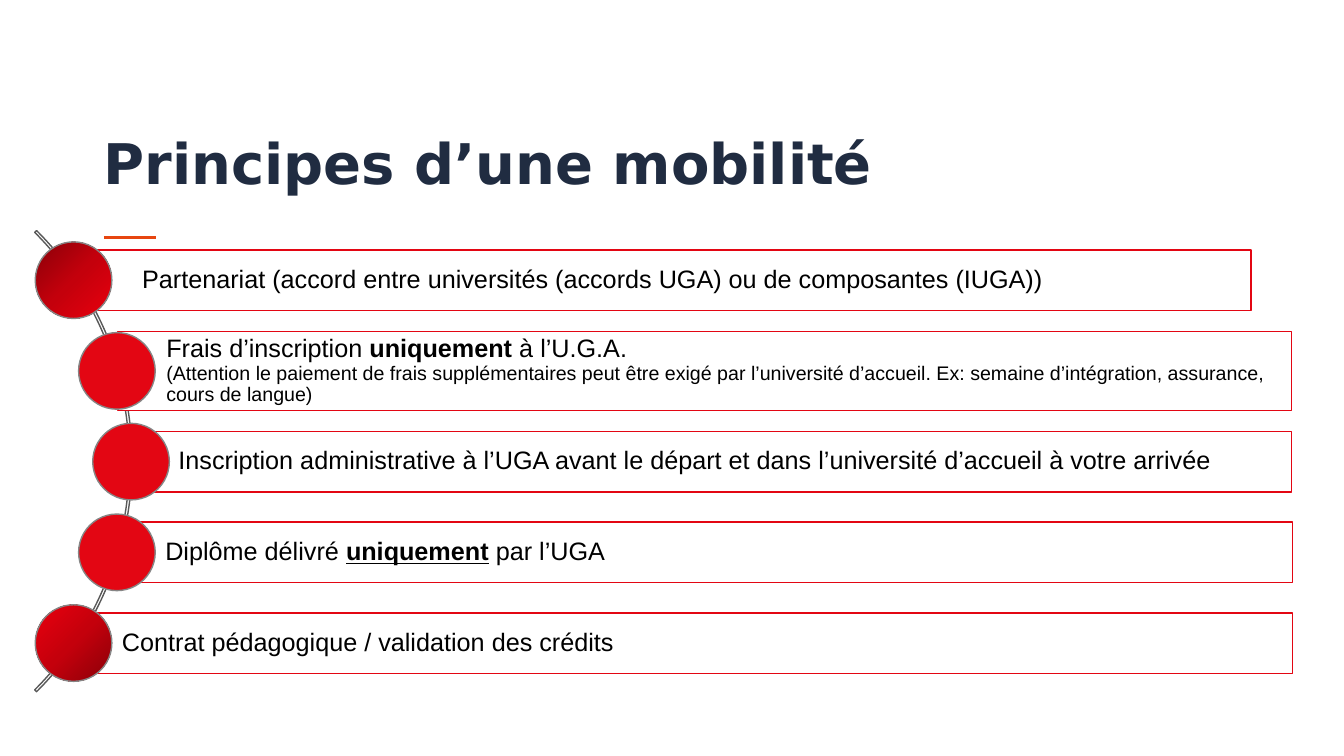
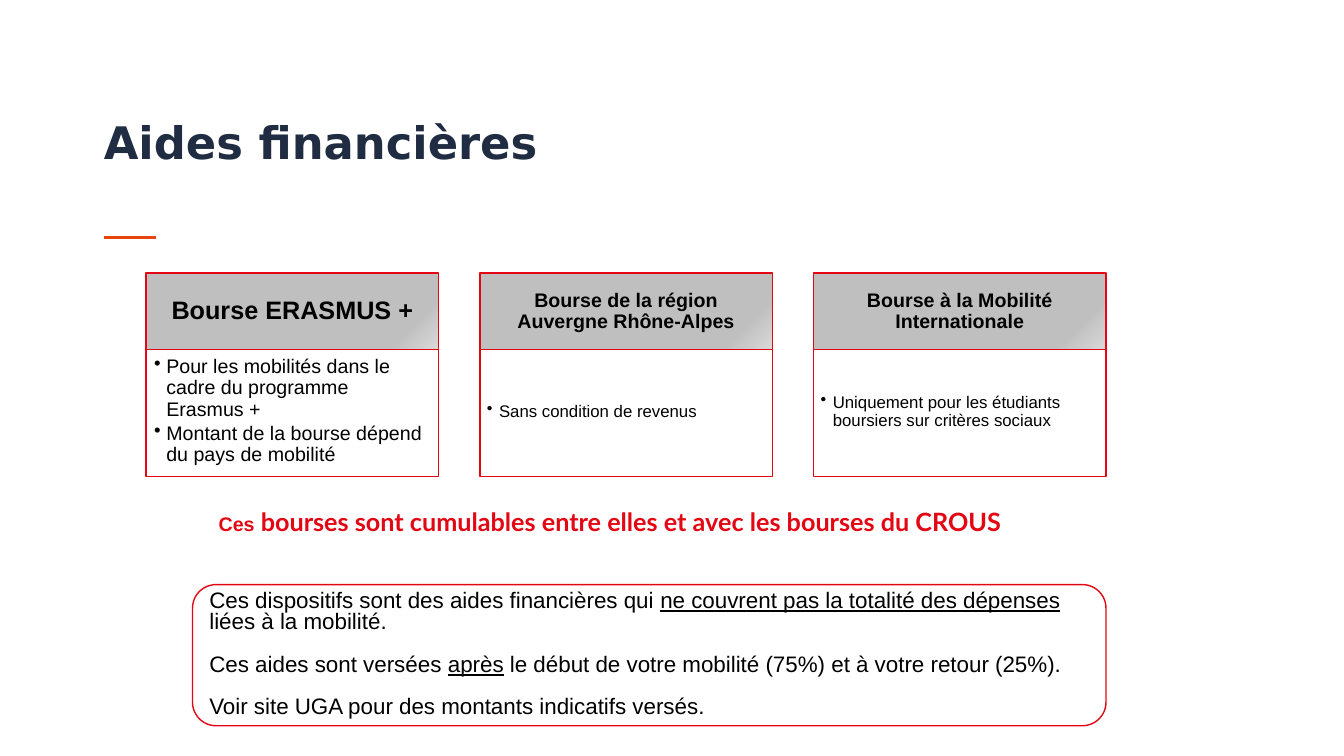
import pptx
import pptx.util
import pptx.dml.color
import pptx.enum.shapes
import pptx.enum.text
import pptx.oxml
import pptx.oxml.ns
import lxml.etree

RGBColor = pptx.dml.color.RGBColor
Shape = pptx.enum.shapes.MSO_SHAPE
Align = pptx.enum.text.PP_ALIGN
Anchor = pptx.enum.text.MSO_ANCHOR
qn = pptx.oxml.ns.qn

PX = 9144
TITLE_ONLY = 5
NAVY = RGBColor(0x20, 0x2C, 0x41)
ORANGE = RGBColor(0xE7, 0x46, 0x10)
RED = RGBColor(0xE3, 0x06, 0x13)
DARK_RED = RGBColor(0x8A, 0x00, 0x08)
MID_RED = RGBColor(0xC4, 0x00, 0x0C)
BRIGHT_RED = RGBColor(0xE9, 0x00, 0x0E)
WHITE = RGBColor(0xFF, 0xFF, 0xFF)
BLACK = RGBColor(0x00, 0x00, 0x00)
PALE_GREY = RGBColor(0xD9, 0xD9, 0xD9)
SILVER = RGBColor(0xBF, 0xBF, 0xBF)
GREY = RGBColor(0x86, 0x86, 0x86)
DARK_GREY = RGBColor(0x59, 0x59, 0x59)

BOLD = {"bold": True}
UNDERLINE = {"underline": True}
RED_STOPS = [(0, DARK_RED), (50, MID_RED), (100, BRIGHT_RED)]
HEADER_STOPS = [(0, PALE_GREY), (14, SILVER)]
CORNER_GLOW = '<a:path path="circle"><a:fillToRect l="100000" t="100000"/></a:path>'

PRINCIPLES = [
    (93, 1148, 60, 35, 45,
     ["Partenariat (accord entre universités (accords UGA) ou de composantes (IUGA))"]),
    (117, 1164, 78, 78, None,
     ["Frais d’inscription ", ("uniquement", BOLD), " à l’U.G.A.", "\n",
      ("(Attention le paiement de frais supplémentaires peut être exigé par l’université "
       "d’accueil. Ex: semaine d’intégration, assurance, cours de langue)",
       {"size": pptx.util.Pt(14)})]),
    (129, 1152, 60, 92, None,
     ["Inscription administrative à l’UGA avant le départ et dans l’université d’accueil "
      "à votre arrivée"]),
    (116, 1166, 60, 78, None,
     ["Diplôme délivré ", ("uniquement", {"bold": True, "underline": True}), " par l’UGA"]),
    (73, 1209, 60, 35, 225,
     ["Contrat pédagogique / validation des crédits"]),
]
GRANTS = [
    ("Bourse ERASMUS +", 18, 14, (8, 8, 11, 12),
     ["Pour les mobilités dans le cadre du programme Erasmus +",
      "Montant de la bourse dépend du pays de mobilité"]),
    ("Bourse de la région Auvergne Rhône-Alpes", 14, 12, (7, 7, 9, 10),
     ["Sans condition de revenus"]),
    ("Bourse à la Mobilité Internationale", 14, 12, (7, 7, 9, 10),
     ["Uniquement pour les étudiants boursiers sur critères sociaux"]),
]
CONDITIONS = [
    ["Ces dispositifs sont des aides financières qui ",
     ("ne couvrent pas la totalité des dépenses", UNDERLINE), " liées à la mobilité."],
    ["Ces aides sont versées ", ("après", UNDERLINE),
     " le début de votre mobilité (75%) et à votre retour (25%)."],
    ["Voir site UGA pour des montants indicatifs versés."],
]


def px(*lengths):
    return [pptx.util.Emu(length * PX) for length in lengths]


def style_font(font, size, color, name="Arial", bold=False):
    font.name = name
    font.size = pptx.util.Pt(size)
    font.color.rgb = color
    font.bold = bold


def add_spans(para, spans):
    for span in spans:
        text, changes = span if isinstance(span, tuple) else (span, {})
        if text == "\n":
            para.add_line_break()
            continue
        run = para.add_run()
        run.text = text
        for attribute, value in changes.items():
            setattr(run.font, attribute, value)


def set_bullet(para, indent):
    properties = para._p.get_or_add_pPr()
    properties.set("marL", str(indent * PX))
    properties.set("indent", str(-indent * PX))
    lxml.etree.SubElement(properties, qn("a:buChar")).set("char", "•")


def write(box, paragraphs, size, color=BLACK, bold=False, align=Align.LEFT,
          insets=(10, 5, 10, 5), anchor=Anchor.MIDDLE, spacing=0.9, gap=0, bullet=False):
    frame = box.text_frame
    frame.word_wrap = True
    frame.vertical_anchor = anchor
    (frame.margin_left, frame.margin_top,
     frame.margin_right, frame.margin_bottom) = px(*insets)
    for index, spans in enumerate(paragraphs):
        para = frame.add_paragraph() if index else frame.paragraphs[0]
        if bullet:
            set_bullet(para, 12)
        para.alignment = align
        para.line_spacing = spacing
        if index:
            para.space_before = pptx.util.Pt(gap)
        style_font(para.font, size, color, bold=bold)
        add_spans(para, spans)


def add_box(page, kind, left, top, width, height, fill=WHITE, line=RED):
    box = page.shapes.add_shape(kind, *px(left, top, width, height))
    box.shadow.inherit = False
    box.fill.solid()
    box.fill.fore_color.rgb = fill
    box.line.color.rgb = line
    box.line.width = pptx.util.Pt(1)
    return box


def set_gradient(box, stops, direction):
    stop_xml = "".join(
        f'<a:gs pos="{position * 1000}"><a:srgbClr val="{color}"/></a:gs>'
        for position, color in stops)
    gradient = pptx.oxml.parse_xml(
        f'<a:gradFill {pptx.oxml.ns.nsdecls("a")} rotWithShape="1">'
        f'<a:gsLst>{stop_xml}</a:gsLst>{direction}</a:gradFill>')
    properties = box._element.spPr
    properties.replace(properties.find(qn("a:solidFill")), gradient)


def add_page(deck, title, size, top):
    page = deck.slides.add_slide(deck.slide_layouts[TITLE_ONLY])
    heading = page.shapes.title
    heading.left, heading.top, heading.width, heading.height = px(93, top, 1046, 100)
    frame = heading.text_frame
    frame.text = title
    frame.auto_size = pptx.enum.text.MSO_AUTO_SIZE.NONE
    frame.vertical_anchor = Anchor.TOP
    para = frame.paragraphs[0]
    para.alignment = Align.LEFT
    para.line_spacing = 0.9
    style_font(para.font, size, NAVY, "DejaVu Sans", True)
    rule = page.shapes.add_connector(
        pptx.enum.shapes.MSO_CONNECTOR.STRAIGHT, *px(103, 236, 155, 236))
    rule.line.color.rgb = ORANGE
    rule.line.width = pptx.util.Pt(2.25)
    lxml.etree.SubElement(rule._element.spPr, qn("a:effectLst"))
    return page


def add_arc(page):
    arc = add_box(page, Shape.BLOCK_ARC, -516, 134, 647, 647, WHITE, DARK_GREY)
    for index, value in enumerate((189, 27, 0.004)):
        arc.adjustments[index] = value


def add_principle(page, middle, left, width, height, dot_left, angle, spans):
    row = add_box(page, Shape.RECTANGLE, left, middle - height // 2, width, height)
    write(row, [spans], 18, insets=(48, 5, 5, 5))
    dot = add_box(page, Shape.OVAL, dot_left, middle - 38, 76, 76, RED, GREY)
    if angle is not None:
        set_gradient(dot, RED_STOPS, f'<a:lin ang="{angle * 60000}" scaled="0"/>')


def add_grant(page, left, name, name_size, detail_size, insets, details):
    header = add_box(page, Shape.RECTANGLE, left, 271, 290, 76)
    set_gradient(header, HEADER_STOPS, CORNER_GLOW)
    write(header, [[name]], name_size, bold=True, align=Align.CENTER, insets=(11, 6, 11, 6))
    body = add_box(page, Shape.RECTANGLE, left, 347, 290, 126)
    write(body, [[detail] for detail in details], detail_size,
          insets=insets, gap=2, bullet=True)


def build_principles(deck):
    page = add_page(deck, "Principes d’une mobilité", 40, 130)
    add_arc(page)
    for index, principle in enumerate(PRINCIPLES):
        add_principle(page, 278 + 90 * index, *principle)


def build_grants(deck):
    page = add_page(deck, "Aides financières", 32, 115)
    for index, grant in enumerate(GRANTS):
        add_grant(page, 145 + 331 * index, *grant)
    note = page.shapes.add_textbox(*px(175, 497, 860, 71))
    lato = {"name": "Lato", "size": pptx.util.Pt(18)}
    write(note, [["Ces", (" bourses sont cumulables entre elles et avec les bourses du CROUS", lato)]],
          14, RED, True, Align.CENTER, anchor=Anchor.TOP, spacing=1.0)
    conditions = add_box(page, Shape.ROUNDED_RECTANGLE, 191, 580, 906, 140)
    write(conditions, CONDITIONS, 16, spacing=0.8, gap=15)


def main():
    deck = pptx.Presentation()
    deck.slide_width, deck.slide_height = px(1333, 750)
    build_principles(deck)
    build_grants(deck)
    deck.save("out.pptx")


if __name__ == "__main__":
    main()
